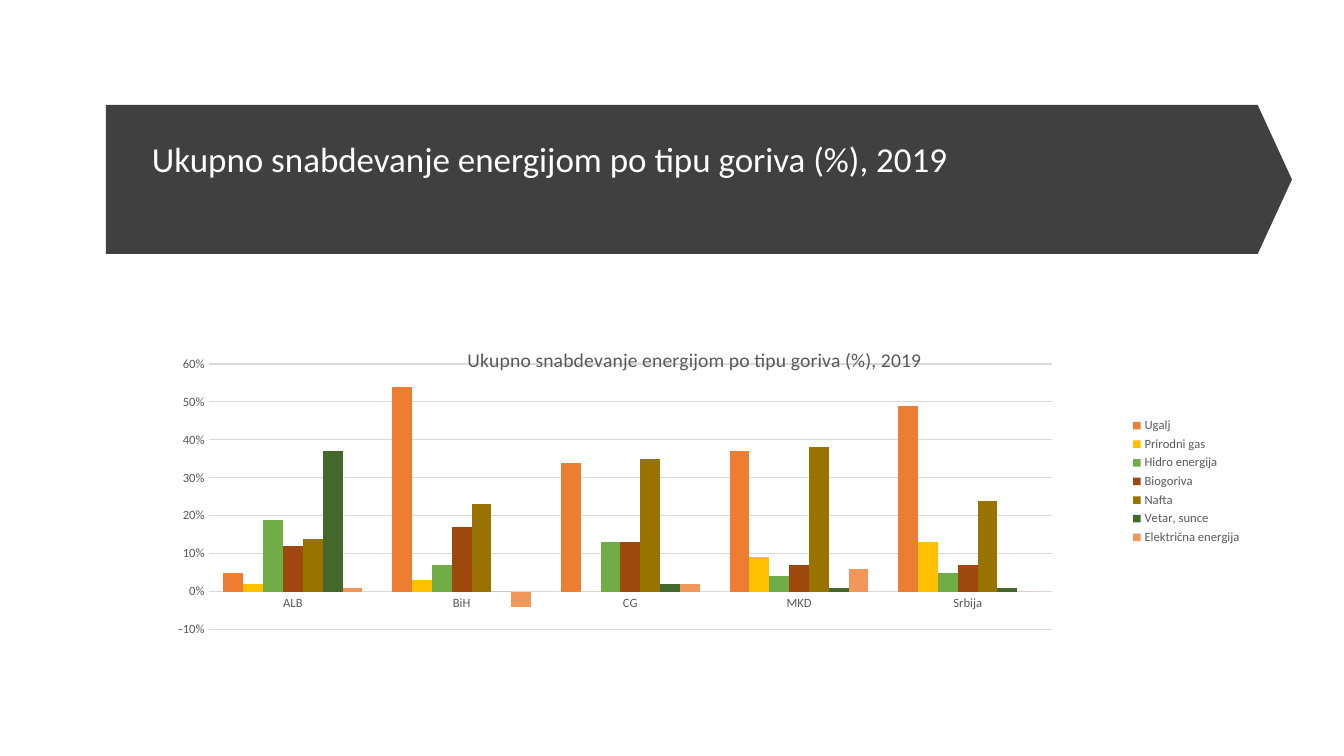
from lxml import etree
from pptx import Presentation
from pptx.chart.data import CategoryChartData
from pptx.dml.color import RGBColor
from pptx.enum.chart import XL_CHART_TYPE, XL_LEGEND_POSITION, XL_TICK_MARK
from pptx.enum.shapes import MSO_SHAPE
from pptx.enum.text import MSO_ANCHOR, MSO_AUTO_SIZE, PP_ALIGN
from pptx.oxml.ns import qn
from pptx.util import Pt

COLUMNS = XL_CHART_TYPE.COLUMN_CLUSTERED
LEGEND_RIGHT = XL_LEGEND_POSITION.RIGHT
NO_TICK = XL_TICK_MARK.NONE
DOWN_ARROW = MSO_SHAPE.DOWN_ARROW

HEADING = "Ukupno snabdevanje energijom po tipu goriva (%), 2019"
COUNTRIES = ["ALB", "BiH", "CG", "MKD", "Srbija"]
FUELS = [
    ("Ugalj", "ED7D31", (0.05, 0.54, 0.34, 0.37, 0.49)),
    ("Prirodni gas", "FFC000", (0.02, 0.03, 0, 0.09, 0.13)),
    ("Hidro energija", "70AD47", (0.19, 0.07, 0.13, 0.04, 0.05)),
    ("Biogoriva", "9E480E", (0.12, 0.17, 0.13, 0.07, 0.07)),
    ("Nafta", "997300", (0.14, 0.23, 0.35, 0.38, 0.24)),
    ("Vetar, sunce", "43682B", (0.37, 0, 0.02, 0.01, 0.01)),
    ("Električna energija", "F1975A", (0.01, -0.04, 0.02, 0.06, 0)),
]
COLORS = {"banner": "404040", "heading": "FFFFFF", "label": "595959", "grid": "D9D9D9"}
FONT = "Calibri"

# Lengths in px: left, top, width, height
SLIDE_SIZE = (1344, 756)
BANNER_BOX = (106, 105, 1186, 149)
HEADING_BOX = (142, 133, 1105, 95)
CHART_BOX = (142, 327, 1110, 310)
HEADING_INSETS = {"margin_left": 10, "margin_right": 10, "margin_top": 9, "margin_bottom": 5}
# Fractions of the chart area
PLOT_LAYOUT = {"x": 0.06, "y": 0.12, "w": 0.76, "h": 0.86}
CHART_TITLE_LAYOUT = {"x": 0.29, "y": 0.05}

EMU_PER_PX = 914400 / 100.8


def px(length):
    return round(length * EMU_PER_PX)


def rgb(name):
    return RGBColor.from_string(COLORS[name])


def set_font(font, size, color):
    for key, value in {"name": FONT, "size": Pt(size), "bold": False}.items():
        setattr(font, key, value)
    font.color.rgb = rgb(color)


def add_banner(slide):
    """Draw a down arrow turned to the right, so its width and height swap."""
    left, top, length, thickness = BANNER_BOX
    shift = (length - thickness) / 2
    banner = slide.shapes.add_shape(
        DOWN_ARROW, px(left + shift), px(top - shift), px(thickness), px(length))
    banner.rotation = 270
    banner.adjustments[0] = 1
    banner.adjustments[1] = 0.23
    banner.shadow.inherit = False
    banner.fill.solid()
    banner.fill.fore_color.rgb = rgb("banner")
    banner.line.fill.background()


def format_heading(title):
    title._element.getparent().append(title._element)  # in front of the banner
    for key, value in zip(("left", "top", "width", "height"), HEADING_BOX):
        setattr(title, key, px(value))
    frame = title.text_frame
    frame.text = HEADING
    for key, value in HEADING_INSETS.items():
        setattr(frame, key, px(value))
    frame.word_wrap = True
    frame.auto_size = MSO_AUTO_SIZE.NONE
    frame.vertical_anchor = MSO_ANCHOR.TOP
    paragraph = frame.paragraphs[0]
    paragraph.alignment = PP_ALIGN.LEFT
    paragraph.line_spacing = 0.9
    set_font(paragraph.runs[0].font, 25, "heading")


def place(part, after, fractions, inner=False):
    """Give a chart part a manual layout, following its child `after` if it has one."""
    for old in part.findall(qn("c:layout")):
        part.remove(old)
    layout = etree.Element(qn("c:layout"))
    manual = etree.SubElement(layout, qn("c:manualLayout"))
    settings = [("layoutTarget", "inner")] if inner else []
    settings += [(f"{key}Mode", "edge") for key in ("x", "y")]
    settings += list(fractions.items())
    for tag, value in settings:
        etree.SubElement(manual, qn(f"c:{tag}")).set("val", str(value))
    previous = part.find(qn(after)) if after else None
    part.insert(0 if previous is None else part.index(previous) + 1, layout)


def add_fuel_chart(slide):
    data = CategoryChartData(number_format="0%")
    data.categories = COUNTRIES
    for name, _, shares in FUELS:
        data.add_series(name, shares)
    chart = slide.shapes.add_chart(COLUMNS, *map(px, CHART_BOX), data).chart
    set_font(chart.font, 9, "label")

    chart.has_title = True
    caption = chart.chart_title
    caption.text_frame.text = HEADING
    set_font(caption.text_frame.paragraphs[0].runs[0].font, 14, "label")
    caption.include_in_layout = False
    place(caption._element, "c:tx", CHART_TITLE_LAYOUT)

    chart.has_legend = True
    chart.legend.position = LEGEND_RIGHT
    chart.legend.include_in_layout = False
    set_font(chart.legend.font, 9, "label")

    plot = chart.plots[0]
    plot.gap_width = 150
    plot.overlap = 0
    plot.vary_by_categories = False
    for series, (_, color, _) in zip(plot.series, FUELS):
        series.invert_if_negative = False
        series.format.fill.solid()
        series.format.fill.fore_color.rgb = RGBColor.from_string(color)
    place(plot._element.getparent(), None, PLOT_LAYOUT, inner=True)

    countries, shares = chart.category_axis, chart.value_axis
    for axis in (countries, shares):
        axis.major_tick_mark = axis.minor_tick_mark = NO_TICK
        set_font(axis.tick_labels.font, 9, "label")
    scale = {"minimum_scale": -0.1, "maximum_scale": 0.6, "major_unit": 0.1,
             "has_major_gridlines": True}
    for key, value in scale.items():
        setattr(shares, key, value)
    shares.tick_labels.number_format = "0%"
    shares.tick_labels.number_format_is_linked = False
    shares.format.line.fill.background()
    for line in (countries.format.line, shares.major_gridlines.format.line):
        line.color.rgb = rgb("grid")
        line.width = Pt(0.75)


def main():
    deck = Presentation()
    deck.slide_width, deck.slide_height = map(px, SLIDE_SIZE)
    title_only = deck.slide_layouts[5]
    slide = deck.slides.add_slide(title_only)
    add_banner(slide)
    format_heading(slide.shapes.title)
    add_fuel_chart(slide)
    deck.save("out.pptx")


if __name__ == "__main__":
    main()
